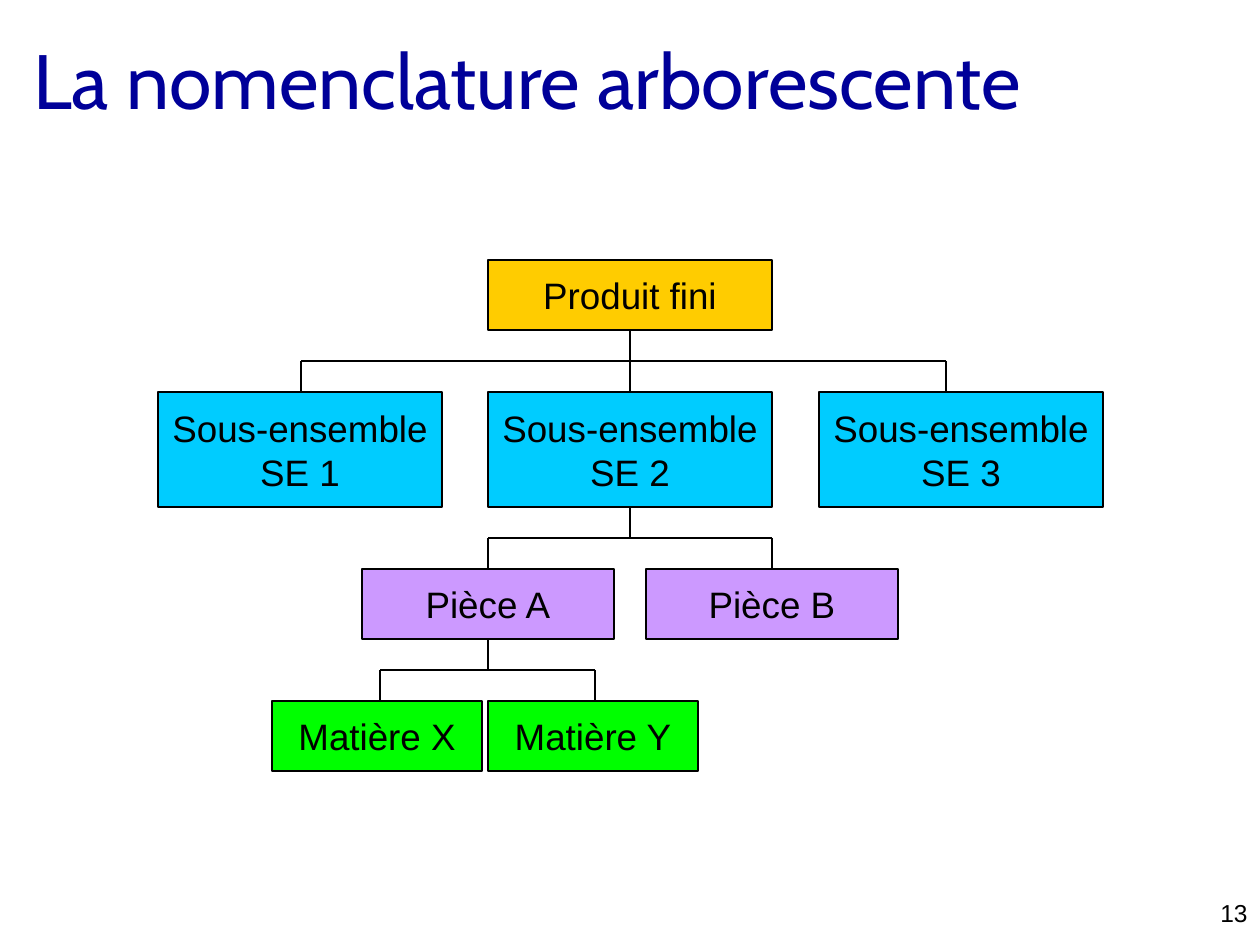
from pptx import Presentation
from pptx.dml.color import RGBColor
from pptx.enum.shapes import MSO_CONNECTOR, MSO_SHAPE
from pptx.enum.text import MSO_ANCHOR as Anchor, PP_ALIGN as Align
from pptx.oxml.ns import qn
from pptx.util import Pt
from lxml.etree import SubElement

PX = 914400 // 126
BLACK = "000000"
TOP, LEVEL_GAP = 260, 62
TOP_SIDE, BOTTOM_SIDE = 0, 2

TITLE = "La nomenclature arborescente"
PAGE = "13"

# Each node: text, left, parent text, x of the line above (None = box centre)
LEVELS = [
    dict(width=284, height=70, fill="FFCC00", nodes=[
        ("Produit fini", 488, None, None)]),
    dict(width=284, height=115, fill="00CCFF", nodes=[
        ("Sous-ensemble\nSE 1", 158, "Produit fini", 301),
        ("Sous-ensemble\nSE 2", 488, "Produit fini", None),
        ("Sous-ensemble\nSE 3", 819, "Produit fini", 946)]),
    dict(width=252, height=70, fill="CC99FF", nodes=[
        ("Pièce A", 362, "Sous-ensemble\nSE 2", None),
        ("Pièce B", 646, "Sous-ensemble\nSE 2", None)]),
    dict(width=210, height=70, fill="00FF00", nodes=[
        ("Matière X", 272, "Pièce A", 380),
        ("Matière Y", 488, "Pièce A", 595)]),
]


def px(*values):
    return [v * PX for v in values]


def rgb(color):
    return RGBColor.from_string(color)


def write(sp, text, size, font="Arial", color=BLACK, align=Align.LEFT,
          anchor=Anchor.MIDDLE, wrap=True):
    tf = sp.text_frame
    tf.word_wrap = wrap
    tf.vertical_anchor = anchor
    for i, line in enumerate(text.split("\n")):
        p = tf.add_paragraph() if i else tf.paragraphs[0]
        p.alignment = align
        r = p.add_run()
        r.text = line
        r.font.size = Pt(size)
        r.font.name = font
        r.font.color.rgb = rgb(color)


def add_box(slide, text, left, top, width, height, fill):
    sp = slide.shapes.add_shape(MSO_SHAPE.RECTANGLE, *px(left, top, width, height))
    sp.shadow.inherit = False
    sp.fill.solid()
    sp.fill.fore_color.rgb = rgb(fill)
    sp.line.color.rgb = rgb(BLACK)
    sp.line.width = Pt(0.75)
    write(sp, text, 21, align=Align.CENTER, wrap=False)
    return sp


def add_line(slide, x1, y1, x2, y2):
    line = slide.shapes.add_connector(MSO_CONNECTOR.STRAIGHT, *px(x1, y1, x2, y2))
    line.line.color.rgb = rgb(BLACK)
    line.line.width = Pt(1.5)
    SubElement(line._element.spPr, qn("a:effectLst"))
    return line


def add_tree(slide):
    boxes, centers, stems = {}, {}, set()
    top = TOP
    for level in LEVELS:
        width, height = level["width"], level["height"]
        bus = top - LEVEL_GAP // 2
        for text, left, parent, drop in level["nodes"]:
            box = add_box(slide, text, left, top, width, height, level["fill"])
            boxes[text], centers[text] = box, left + width // 2
            if parent is None:
                continue
            stem, x = centers[parent], drop or centers[text]
            if parent not in stems:
                stems.add(parent)
                line = add_line(slide, stem, top - LEVEL_GAP, stem, bus)
                line.begin_connect(boxes[parent], BOTTOM_SIDE)
            if x != stem:
                add_line(slide, stem, bus, x, bus)
            line = add_line(slide, x, bus, x, top)
            if drop is None:
                line.end_connect(box, TOP_SIDE)
        top += height + LEVEL_GAP


def main():
    prs = Presentation()
    prs.slide_width, prs.slide_height = px(1260, 945)
    slide = prs.slides.add_slide(prs.slide_layouts[6])
    page = slide.shapes.add_textbox(*px(998, 892, 262, 32))
    write(page, PAGE, 14, align=Align.RIGHT, anchor=Anchor.TOP)
    title = slide.shapes.add_textbox(*px(21, 0, 1071, 158))
    write(title, TITLE, 44, font="Cabin", color="000099")
    add_tree(slide)
    prs.save("out.pptx")


if __name__ == "__main__":
    main()
